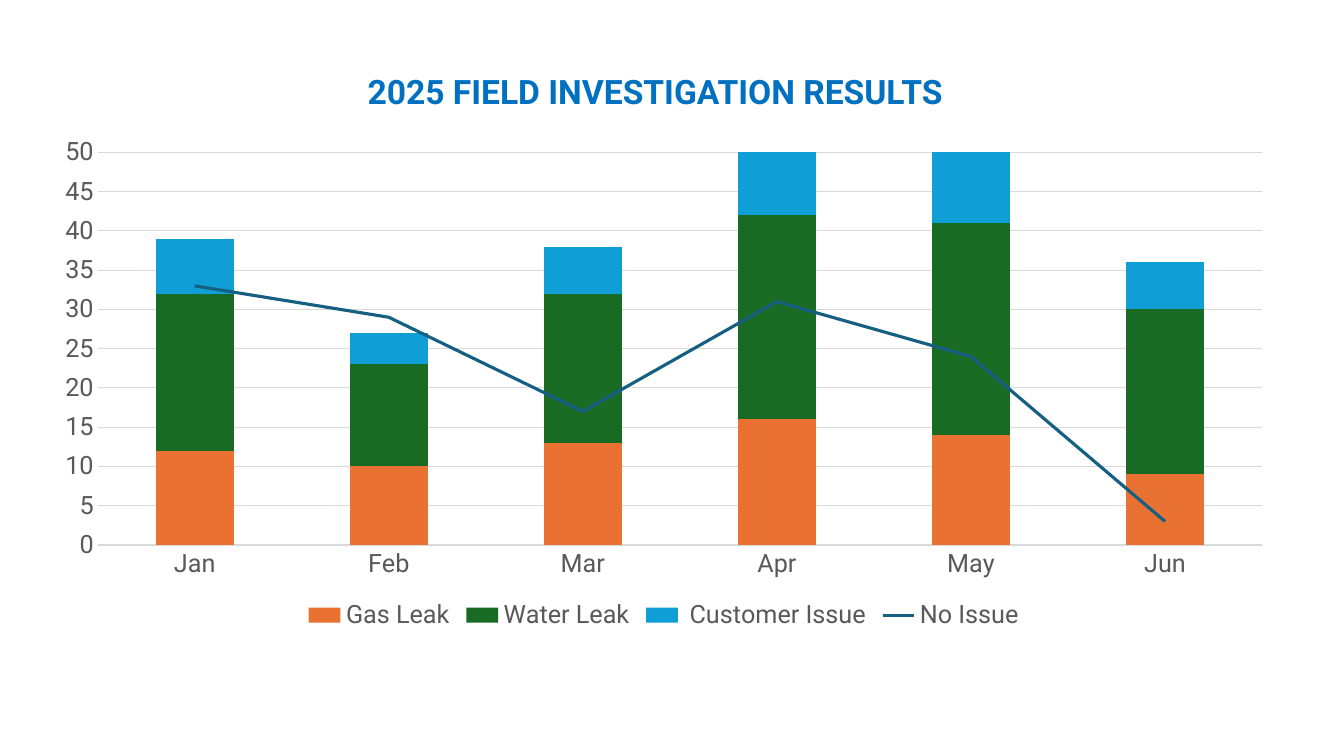
from pptx import Presentation
from pptx.chart.data import CategoryChartData
from pptx.dml.color import RGBColor
from pptx.enum.chart import (XL_CHART_TYPE, XL_LEGEND_POSITION,
                             XL_MARKER_STYLE, XL_TICK_MARK)
from pptx.enum.text import PP_ALIGN
from pptx.oxml import parse_xml
from pptx.oxml.ns import nsdecls, qn
from pptx.util import Pt

MONTHS = ["Jan", "Feb", "Mar", "Apr", "May", "Jun"]
CAUSES = [
    ("Gas Leak", [12, 10, 13, 16, 14, 9], "E97132"),
    ("Water Leak", [20, 13, 19, 26, 27, 21], "196B24"),
    (" Customer Issue", [7, 4, 6, 17, 9, 6], "0F9ED5"),
    ("No Issue", [33, 29, 17, 31, 24, 3], "156082"),
]
PLOT = {"x": 0.046, "y": 0.05, "w": 0.934, "h": 0.773}


def color(code):
    return RGBColor.from_string(code)


def apply(item, **values):
    for name, value in values.items():
        setattr(item, name, value)


class Deck:
    font = "Roboto"
    blue = "0070C0"
    gray = "595959"
    pale = "D9D9D9"

    def __init__(self):
        self.file = Presentation()
        apply(self.file, slide_width=Pt(960), slide_height=Pt(540))
        self.slide = self.file.slides.add_slide(self.file.slide_layouts[6])

    def style(self, font, size, code, bold=False):
        apply(font, name=self.font, size=Pt(size), bold=bold)
        font.color.rgb = color(code)

    def stroke(self, line, code, width):
        line.color.rgb = color(code)
        line.width = Pt(width)

    def title(self, text, *box):
        frame = self.slide.shapes.add_textbox(*map(Pt, box)).text_frame
        frame.word_wrap = True
        para = frame.paragraphs[0]
        apply(para, text=text, alignment=PP_ALIGN.CENTER)
        self.style(para.runs[0].font, 24, self.blue, True)

    def chart(self, *box):
        data = CategoryChartData()
        data.categories = MONTHS
        for name, values, _ in CAUSES:
            data.add_series(name, values)
        chart = self.slide.shapes.add_chart(
            XL_CHART_TYPE.COLUMN_STACKED, *map(Pt, box), data).chart
        apply(chart, has_title=False, has_legend=True)
        self.style(chart.font, 10, "000000")
        self.split(chart)
        self.axes(chart)
        self.place(chart)

        # Legend
        apply(chart.legend, position=XL_LEGEND_POSITION.BOTTOM,
              include_in_layout=False)
        self.style(chart.legend.font, 18, self.gray)

    def split(self, chart):
        # Turn the last series into a line on the same axes
        bars = chart.plots[0]
        apply(bars, gap_width=150, overlap=100, vary_by_categories=False)
        root = bars._element
        last = root.findall(qn("c:ser"))[-1]
        for flag in last.findall(qn("c:invertIfNegative")):
            last.remove(flag)
        ids = "".join(f'<c:axId val="{axis.get("val")}"/>'
                      for axis in root.findall(qn("c:axId")))
        group = parse_xml(
            f'<c:lineChart {nsdecls("c")}><c:grouping val="standard"/>'
            f'<c:varyColors val="0"/><c:marker val="1"/>{ids}</c:lineChart>')
        group.insert(2, last)
        root.addnext(group)

        # Series colors
        for series, (_, _, code) in zip(bars.series, CAUSES):
            series.format.fill.solid()
            series.format.fill.fore_color.rgb = color(code)
        trend = chart.plots[1].series[0]
        trend.smooth = False
        trend.marker.style = XL_MARKER_STYLE.NONE
        self.stroke(trend.format.line, CAUSES[-1][2], 2.25)

    def axes(self, chart):
        months, counts = chart.category_axis, chart.value_axis
        for axis in (months, counts):
            apply(axis, major_tick_mark=XL_TICK_MARK.NONE,
                  minor_tick_mark=XL_TICK_MARK.NONE)
            self.style(axis.tick_labels.font, 18, self.gray)
        apply(counts, minimum_scale=0, maximum_scale=50, major_unit=5,
              has_major_gridlines=True)
        counts.format.line.fill.background()
        for line in (months.format.line, counts.major_gridlines.format.line):
            self.stroke(line, self.pale, 0.75)

    def place(self, chart):
        # Fix the inner plot area
        area = chart._chartSpace.chart.plotArea
        for old in area.findall(qn("c:layout")):
            area.remove(old)
        modes = "".join(f'<c:{key}Mode val="edge"/>' for key in "xy")
        sizes = "".join(f'<c:{key} val="{val}"/>' for key, val in PLOT.items())
        area.insert(0, parse_xml(
            f'<c:layout {nsdecls("c")}><c:manualLayout>'
            f'<c:layoutTarget val="inner"/>{modes}{sizes}'
            f'</c:manualLayout></c:layout>'))


def main():
    deck = Deck()
    deck.chart(28.8, 90.7, 890.6, 362.9)
    deck.title("2025 FIELD INVESTIGATION RESULTS", 38.2, 46.8, 859.7, 42.5)
    deck.file.save("out.pptx")


if __name__ == "__main__":
    main()
